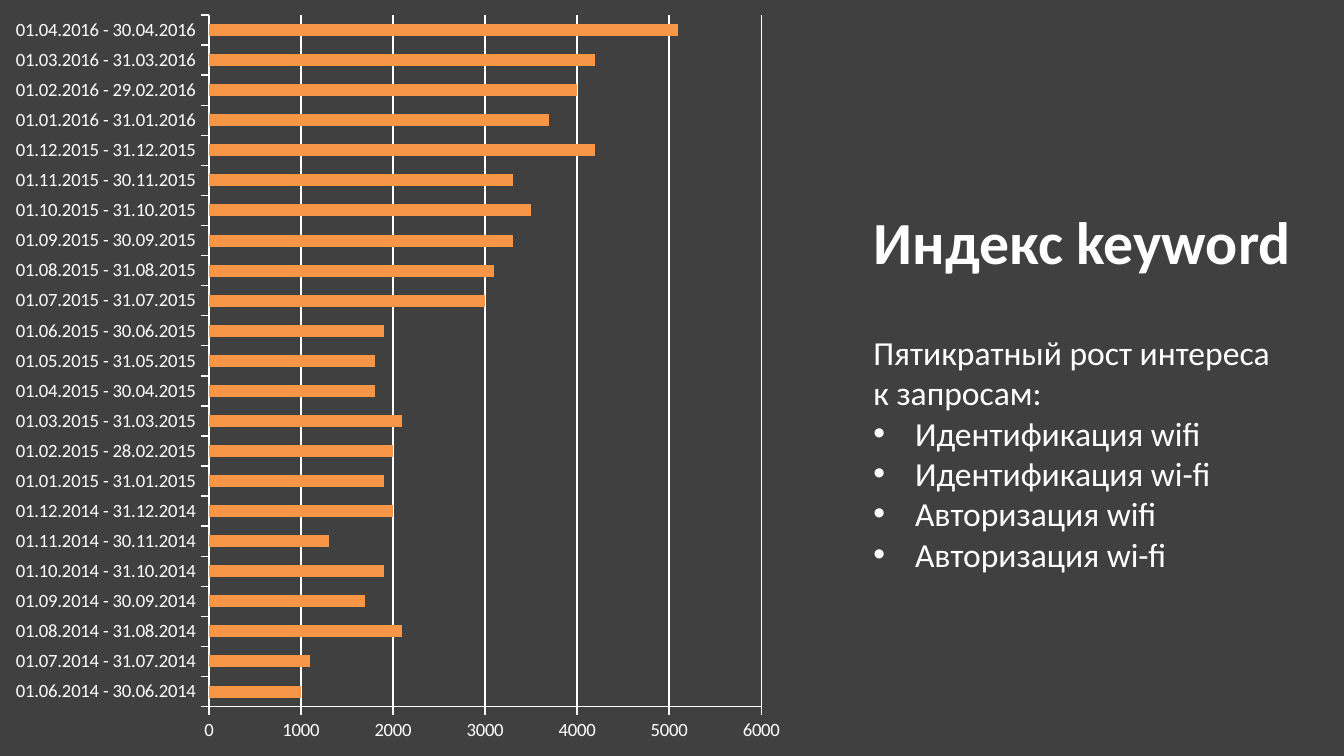
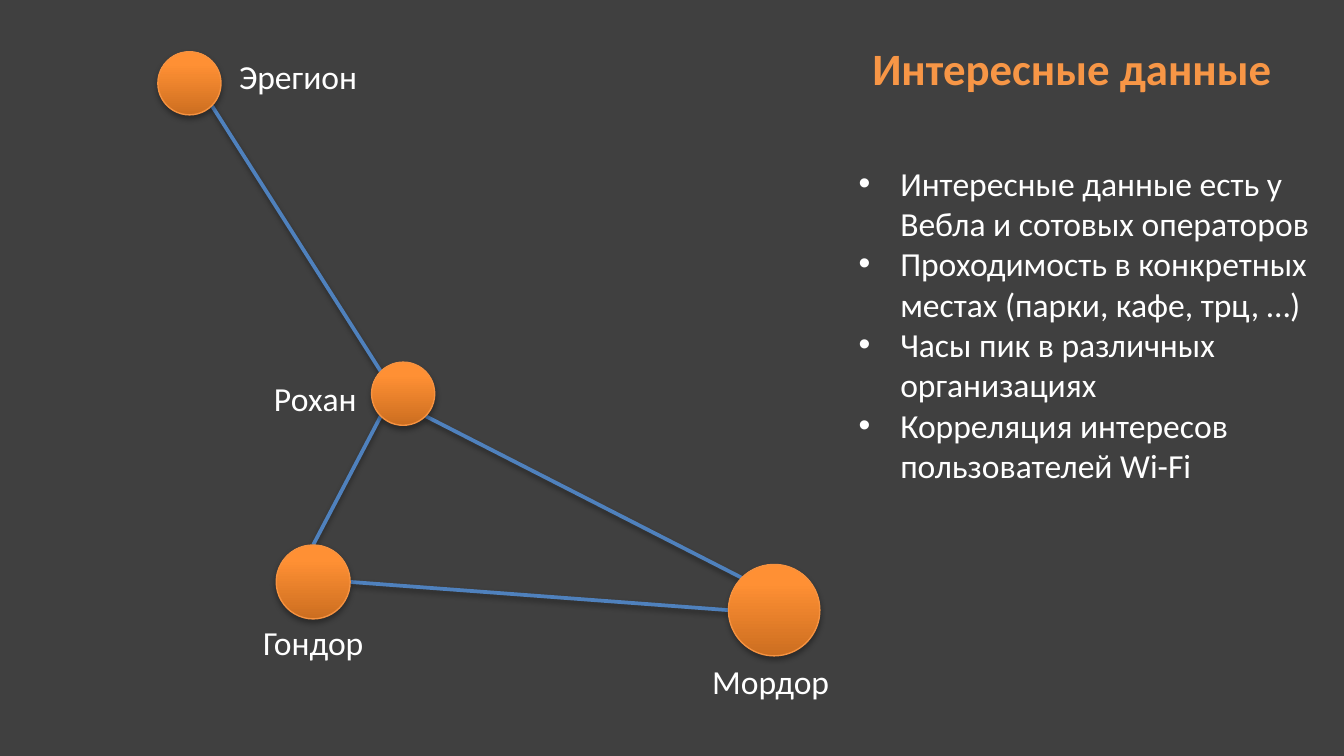
from math import cos, radians, sin

from lxml.etree import SubElement
from pptx import Presentation
from pptx.chart.data import CategoryChartData
from pptx.dml.color import RGBColor
from pptx.enum.chart import XL_CHART_TYPE as ChartType, XL_TICK_MARK as TickMark
from pptx.enum.shapes import MSO_CONNECTOR as Connector, MSO_SHAPE as Shape
from pptx.enum.text import MSO_ANCHOR as Anchor, MSO_AUTO_SIZE as AutoSize, PP_ALIGN as Align
from pptx.oxml.ns import qn
from pptx.util import Inches, Pt

WIDTH = 10
HEIGHT = WIDTH * 9 / 16
FONT = "Calibri"
TITLE_ONLY = 5
INDENT = 0.31
HARD_SPACE = chr(160)

DARK = RGBColor(0x40, 0x40, 0x40)
WHITE = RGBColor(0xFF, 0xFF, 0xFF)
ORANGE = RGBColor(0xF7, 0x96, 0x46)
NODE_DARK = RGBColor(0xCC, 0x6E, 0x20)
NODE_LIGHT = RGBColor(0xFF, 0x90, 0x34)
NODE_EDGE = RGBColor(0xF6, 0x92, 0x40)
BLUE = RGBColor(0x4F, 0x81, 0xBD)

# Month, its last day, number of queries
QUERIES = [
    ("06.2014", 30, 1000), ("07.2014", 31, 1100), ("08.2014", 31, 2100),
    ("09.2014", 30, 1700), ("10.2014", 31, 1900), ("11.2014", 30, 1300),
    ("12.2014", 31, 2000), ("01.2015", 31, 1900), ("02.2015", 28, 2000),
    ("03.2015", 31, 2100), ("04.2015", 30, 1800), ("05.2015", 31, 1800),
    ("06.2015", 30, 1900), ("07.2015", 31, 3000), ("08.2015", 31, 3100),
    ("09.2015", 30, 3300), ("10.2015", 31, 3500), ("11.2015", 30, 3300),
    ("12.2015", 31, 4200), ("01.2016", 31, 3700), ("02.2016", 29, 4000),
    ("03.2016", 31, 4200), ("04.2016", 30, 5100),
]
GROWTH_TITLE = "Индекс keyword"
GROWTH_INTRO = ["Пятикратный рост интереса", "к запросам:"]
GROWTH_QUERIES = [
    "Идентификация wifi", "Идентификация wi-fi", "Авторизация wifi", "Авторизация wi-fi",
]

DATA_TITLE = "Интересные данные"
DATA_POINTS = [
    "Интересные данные есть у Вебла и сотовых операторов",
    "Проходимость в конкретных местах (парки, кафе, трц, …)",
    "Часы пик в различных организациях",
    "Корреляция интересов пользователей Wi-Fi",
]
# Place: centre x, centre y, diameter, label box
PLACES = {
    "Эрегион": (1.41, 0.62, 0.47, (1.68, 0.37, 1.09, 0.4)),
    "Рохан": (3.0, 2.93, 0.47, (1.94, 2.76, 0.83, 0.4)),
    "Гондор": (2.33, 4.33, 0.55, (1.86, 4.58, 0.99, 0.4)),
    "Мордор": (5.76, 4.54, 0.68, (5.2, 4.87, 1.09, 0.4)),
}
# Place and angle on its circle (clockwise from the right), at both ends
LINKS = [
    ("Рохан", 135, "Гондор", 270),
    ("Мордор", 225, "Рохан", 45),
    ("Мордор", 180, "Гондор", 0),
    ("Рохан", 225, "Эрегион", 45),
]


def inches(*lengths):
    return [Inches(length) for length in lengths]


def add_bullet(para):
    props = para._p.get_or_add_pPr()
    props.set("marL", str(Inches(INDENT)))
    props.set("indent", str(-Inches(INDENT)))
    SubElement(props, qn("a:buFont"), typeface="Arial")
    SubElement(props, qn("a:buChar"), char="•")


def write(box, lines, size=18, color=WHITE, bold=False, bullets_from=None, wrap=True):
    """Fill a box with paragraphs, bulleted from the given line on."""
    frame = box.text_frame
    frame.word_wrap = wrap
    frame.auto_size = AutoSize.NONE
    frame.vertical_anchor = Anchor.TOP
    for index, line in enumerate(lines):
        para = frame.paragraphs[0] if index == 0 else frame.add_paragraph()
        para.alignment = Align.LEFT
        span = para.add_run()
        span.text = line
        span.font.name = FONT
        span.font.size = Pt(size)
        span.font.bold = bold
        span.font.color.rgb = color
        if bullets_from is not None and index >= bullets_from:
            add_bullet(para)


def add_text(page, area, lines, **style):
    write(page.shapes.add_textbox(*inches(*area)), lines, **style)


def add_page(deck, title, area, **style):
    page = deck.slides.add_slide(deck.slide_layouts[TITLE_ONLY])
    heading = page.shapes.title
    heading.left, heading.top, heading.width, heading.height = inches(*area)
    write(heading, [title], bold=True, **style)
    return page


def add_shadow(shape, opacity, distance):
    effects = SubElement(shape._element.spPr, qn("a:effectLst"))
    shadow = SubElement(
        effects, qn("a:outerShdw"), blurRad=str(Pt(3.1)), dist=str(Pt(distance)),
        dir="5400000", rotWithShape="0")
    black = SubElement(shadow, qn("a:srgbClr"), val="000000")
    SubElement(black, qn("a:alpha"), val=str(opacity * 1000))


def set_line(line, color, width):
    line.color.rgb = color
    line.width = Pt(width)


def add_query_chart(page):
    data = CategoryChartData()
    dash = f"{HARD_SPACE}-{HARD_SPACE}"
    data.categories = [f"01.{month}{dash}{last}.{month}" for month, last, _ in QUERIES]
    data.add_series("Series 1", [count for *_, count in QUERIES])
    chart = page.shapes.add_chart(
        ChartType.BAR_CLUSTERED, *inches(0, 0, 5.92, HEIGHT), data).chart
    chart.has_title = chart.has_legend = False
    chart.font.name, chart.font.size = FONT, Pt(10)
    chart.font.color.rgb = WHITE

    plot = chart.plots[0]
    plot.gap_width = 150
    plot.vary_by_categories = False
    fill = plot.series[0].format.fill
    fill.solid()
    fill.fore_color.rgb = ORANGE

    for axis in (chart.category_axis, chart.value_axis):
        axis.major_tick_mark = TickMark.OUTSIDE
        axis.minor_tick_mark = TickMark.NONE
        set_line(axis.format.line, WHITE, 0.75)
    counts = chart.value_axis
    counts.minimum_scale, counts.maximum_scale, counts.major_unit = 0, 6000, 1000
    counts.has_major_gridlines = True
    set_line(counts.major_gridlines.format.line, WHITE, 0.75)


def rim_point(place, angle):
    x, y, diameter, _ = PLACES[place]
    turn = radians(angle)
    return inches(x + diameter / 2 * cos(turn), y + diameter / 2 * sin(turn))


def add_map(page):
    for start, start_angle, end, end_angle in LINKS:
        link = page.shapes.add_connector(
            Connector.STRAIGHT, *rim_point(start, start_angle), *rim_point(end, end_angle))
        set_line(link.line, BLUE, 2)
        add_shadow(link, opacity=38, distance=1.6)
    for name, (x, y, diameter, label_area) in PLACES.items():
        node = page.shapes.add_shape(Shape.OVAL, *inches(
            x - diameter / 2, y - diameter / 2, diameter, diameter))
        node.fill.gradient()
        node.fill.gradient_angle = 90
        for stop, position, color in zip(
                node.fill.gradient_stops, (0, 0.8), (NODE_DARK, NODE_LIGHT)):
            stop.position = position
            stop.color.rgb = color
        set_line(node.line, NODE_EDGE, 0.75)
        add_shadow(node, opacity=35, distance=1.8)
        add_text(page, label_area, [name], wrap=False)


def main():
    deck = Presentation()
    deck.slide_width, deck.slide_height = inches(WIDTH, HEIGHT)
    background = deck.slide_master.background.fill
    background.solid()
    background.fore_color.rgb = DARK

    growth = add_page(deck, GROWTH_TITLE, (6.4, 1.47, 3.39, 0.64), size=32)
    add_query_chart(growth)
    add_text(growth, (6.4, 2.42, 3.19, 1.92), GROWTH_INTRO + GROWTH_QUERIES,
             bullets_from=len(GROWTH_INTRO), wrap=False)

    interesting = add_page(deck, DATA_TITLE, (6.39, 0.25, 3.25, 0.5), size=24, color=ORANGE)
    add_map(interesting)
    add_text(interesting, (6.29, 1.16, 3.61, 2.52), DATA_POINTS, bullets_from=0)

    deck.save("out.pptx")


if __name__ == "__main__":
    main()
